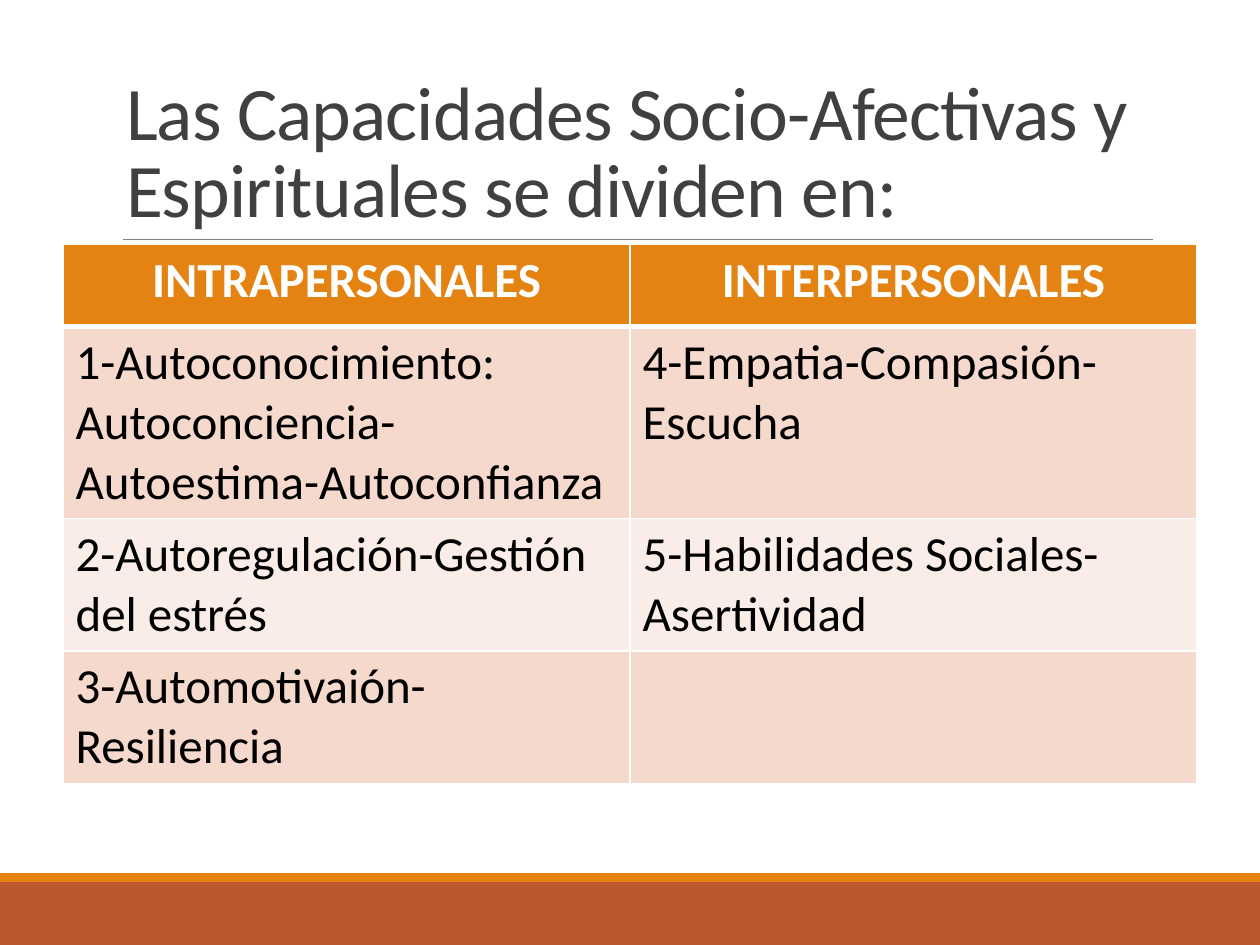
from lxml import etree
from pptx import Presentation
from pptx.dml.color import RGBColor
from pptx.enum.shapes import MSO_CONNECTOR, MSO_SHAPE
from pptx.enum.text import MSO_ANCHOR, MSO_AUTO_SIZE, PP_ALIGN
from pptx.oxml.ns import qn
from pptx.util import Pt

RECTANGLE = MSO_SHAPE.RECTANGLE
STRAIGHT = MSO_CONNECTOR.STRAIGHT
BOTTOM = MSO_ANCHOR.BOTTOM
NO_AUTOFIT = MSO_AUTO_SIZE.NONE
LEFT = PP_ALIGN.LEFT
CENTER = PP_ALIGN.CENTER

FONT = "Calibri"
ORANGE = "E48312"
RUST = "BD582C"
WHITE = "FFFFFF"
BANDS = ("F5D9CC", "FAEDE7")

TITLE = "Las Capacidades Socio-Afectivas y Espirituales se dividen en:"
ROWS = (
    ("INTRAPERSONALES", "INTERPERSONALES"),
    ("1-Autoconocimiento: Autoconciencia- Autoestima-Autoconfianza",
     "4-Empatia-Compasión-Escucha"),
    ("2-Autoregulación-Gestión del estrés",
     "5-Habilidades Sociales-Asertividad"),
    ("3-Automotivaión-Resiliencia", ""),
)
ROW_HEIGHTS = (46.8, 109, 75.5, 75.5)
COLUMN_WIDTH = 324


def color(value):
    return RGBColor.from_string(value)


def format_font(font, size, value, bold=False):
    font.name = FONT
    font.size = Pt(size)
    font.bold = bold
    font.color.rgb = color(value)


def add_band(slide, top, height, fill):
    shape = slide.shapes.add_shape(RECTANGLE, 0, Pt(top), Pt(720), Pt(height))
    shape.shadow.inherit = False
    shape.fill.solid()
    shape.fill.fore_color.rgb = color(fill)
    shape.line.fill.background()


def add_rule(slide, left, right, top):
    connector = slide.shapes.add_connector(
        STRAIGHT, Pt(left), Pt(top), Pt(right), Pt(top))
    connector.line.color.rgb = color("808080")
    connector.line.width = Pt(0.5)
    properties = connector._element.spPr
    etree.SubElement(properties, qn("a:effectLst"))


def set_title(slide):
    title = slide.shapes.title
    title.left, title.top = Pt(64.8), Pt(22.3)
    title.width, title.height = Pt(594), Pt(114.5)
    frame = title.text_frame
    frame.text = TITLE
    frame.word_wrap = True
    frame.auto_size = NO_AUTOFIT
    frame.vertical_anchor = BOTTOM
    paragraph = frame.paragraphs[0]
    paragraph.alignment = LEFT
    paragraph.line_spacing = 0.85
    font = paragraph.runs[0].font
    format_font(font, 43.2, "404040")
    font._element.set("spc", "-50")


def set_borders(cell, bottom_width):
    properties = cell._tc.get_or_add_tcPr()
    widths = (("a:lnL", 1), ("a:lnR", 1), ("a:lnT", 1), ("a:lnB", bottom_width))
    for position, (tag, width) in enumerate(widths):
        border = etree.Element(qn(tag), w=str(Pt(width)))
        fill = etree.SubElement(border, qn("a:solidFill"))
        etree.SubElement(fill, qn("a:srgbClr"), val=WHITE)
        properties.insert(position, border)


def format_cell(cell, text, row_index):
    header = row_index == 0
    cell.text = text
    cell.fill.solid()
    cell.fill.fore_color.rgb = color(
        ORANGE if header else BANDS[(row_index - 1) % 2])
    set_borders(cell, 3 if header else 1)
    paragraph = cell.text_frame.paragraphs[0]
    paragraph.alignment = CENTER if header else LEFT
    for run in paragraph.runs:
        format_font(run.font, 28, WHITE if header else "000000", header)


def add_capacity_table(slide):
    column_count = len(ROWS[0])
    table = slide.shapes.add_table(
        len(ROWS), column_count, Pt(36), Pt(139.7),
        Pt(COLUMN_WIDTH * column_count), Pt(sum(ROW_HEIGHTS))).table
    for column in table.columns:
        column.width = Pt(COLUMN_WIDTH)
    for row_index, (texts, height) in enumerate(zip(ROWS, ROW_HEIGHTS)):
        table.rows[row_index].height = Pt(height)
        for column_index, text in enumerate(texts):
            format_cell(table.cell(row_index, column_index), text, row_index)


def main():
    presentation = Presentation()
    presentation.slide_width, presentation.slide_height = Pt(720), Pt(540)
    slide = presentation.slides.add_slide(presentation.slide_layouts[5])
    add_band(slide, 504, 36, RUST)
    add_band(slide, 499, 5, ORANGE)
    add_rule(slide, 70.5, 658.8, 136.8)
    set_title(slide)
    add_capacity_table(slide)
    presentation.save("out.pptx")


if __name__ == "__main__":
    main()
